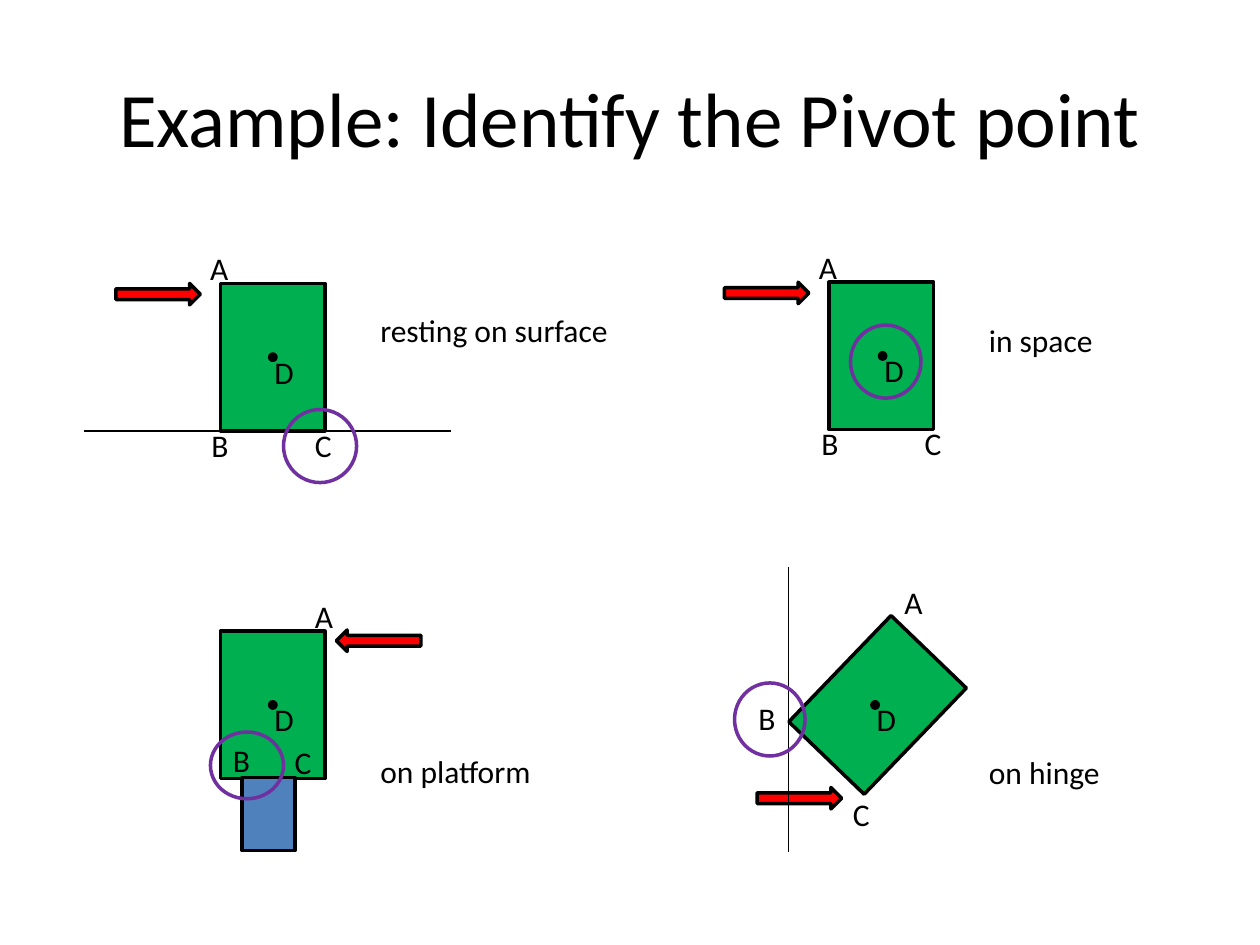
from dataclasses import dataclass

from lxml import etree
from pptx import Presentation
from pptx.dml.color import RGBColor
from pptx.enum.shapes import MSO_CONNECTOR, MSO_SHAPE
from pptx.enum.text import MSO_ANCHOR, MSO_AUTO_SIZE, PP_ALIGN
from pptx.oxml.ns import qn
from pptx.util import Emu, Pt

RECTANGLE = MSO_SHAPE.RECTANGLE
ARROW = MSO_SHAPE.RIGHT_ARROW
OVAL = MSO_SHAPE.OVAL
STRAIGHT = MSO_CONNECTOR.STRAIGHT
MIDDLE = MSO_ANCHOR.MIDDLE
FIT_SHAPE = MSO_AUTO_SIZE.SHAPE_TO_FIT_TEXT
CENTER = PP_ALIGN.CENTER
EMU_PER_PX = 9144
TITLE_ONLY = 5


@dataclass(frozen=True)
class Theme:
    """Colours, font and sizes of the slide."""

    font: str = "Calibri"
    title_size: int = 44
    label_size: int = 18
    outline: float = 2
    thin_line: float = 0.75
    ink: RGBColor = RGBColor(0, 0, 0)
    block: RGBColor = RGBColor(0x00, 0xB0, 0x50)
    force: RGBColor = RGBColor(0xFF, 0x00, 0x00)
    platform: RGBColor = RGBColor(0x4F, 0x81, 0xBD)
    ring: RGBColor = RGBColor(0x70, 0x30, 0xA0)


THEME = Theme()


def px(*lengths):
    """Turn whole px lengths into EMU."""
    return [Emu(length * EMU_PER_PX) for length in lengths]


def place(box, left, top):
    """Give the slide position of a point relative to the box."""
    return box[0] + left, box[1] + top


def style_paragraph(paragraph, size):
    """Set the font of a whole paragraph."""
    paragraph.font.name = THEME.font
    paragraph.font.size = Pt(size)
    paragraph.font.color.rgb = THEME.ink


def add_outlined(slide, kind, box, bounds, fill=None, line=THEME.ink, rotation=0):
    """Draw a preset shape relative to the box."""
    left, top, width, height = bounds
    shape = slide.shapes.add_shape(kind, *px(*place(box, left, top), width, height))
    shape.shadow.inherit = False
    shape.rotation = rotation
    if fill is None:
        shape.fill.background()
    else:
        shape.fill.solid()
        shape.fill.fore_color.rgb = fill
    shape.line.color.rgb = line
    shape.line.width = Pt(THEME.outline)


def add_label(slide, box, text, position, width=35, wrap=False):
    """Write one line of text relative to the box."""
    label = slide.shapes.add_textbox(*px(*place(box, *position), width, 40))
    frame = label.text_frame
    frame.word_wrap = wrap
    frame.auto_size = FIT_SHAPE
    frame.text = text
    style_paragraph(frame.paragraphs[0], THEME.label_size)


def add_thin_line(slide, box, start, end):
    """Draw a surface line relative to the box."""
    line = slide.shapes.add_connector(
        STRAIGHT, *px(*place(box, *start), *place(box, *end))
    )
    line.line.color.rgb = THEME.ink
    line.line.width = Pt(THEME.thin_line)
    etree.SubElement(line._element.spPr, qn("a:effectLst"))


def add_block(slide, box, corners, centre, rotation=0):
    """Draw the block with its corner letters and marked centre D."""
    add_outlined(slide, RECTANGLE, box, (0, 0, 83, 117), THEME.block, rotation=rotation)
    for letter, position in zip("ABC", corners):
        add_label(slide, box, letter, position)
    left, top = centre
    add_label(slide, box, "D", (left - 6, top - 6), wrap=True)
    add_outlined(slide, OVAL, box, (left, top, 5, 5), THEME.ink)


def add_force(slide, box, position, rotation=0):
    """Draw the red force arrow."""
    add_outlined(slide, ARROW, box, (*position, 67, 17), THEME.force, rotation=rotation)


def add_ring(slide, box, bounds):
    """Circle the pivot point."""
    add_outlined(slide, OVAL, box, bounds, line=THEME.ring)


def add_title(slide, box):
    """Fill the title placeholder."""
    title = slide.shapes.title
    title.left, title.top, title.width, title.height = px(*box)
    title.text_frame.text = "Example: Identify the Pivot point"
    title.text_frame.vertical_anchor = MIDDLE
    paragraph = title.text_frame.paragraphs[0]
    paragraph.alignment = CENTER
    style_paragraph(paragraph, THEME.title_size)


def add_surface_case(slide, box):
    """Show the block resting on a surface, with pivot C."""
    add_thin_line(slide, box, (-108, 117), (183, 117))
    add_block(slide, box, [(-18, -32), (-17, 108), (65, 108)], (39, 56))
    add_force(slide, box, (-83, 0))
    add_label(slide, box, "resting on surface", (117, 17), 203)
    add_ring(slide, box, (50, 100, 58, 58))


def add_space_case(slide, box):
    """Show the block in space, with pivot D."""
    add_block(slide, box, [(-18, -32), (-16, 108), (66, 108)], (40, 56))
    add_force(slide, box, (-83, 0))
    add_label(slide, box, "in space", (117, 26), 104)
    add_ring(slide, box, (17, 34, 56, 58))


def add_platform_case(slide, box):
    """Show the block on a platform, with pivot B."""
    add_block(slide, box, [(65, -32), (0, 82), (49, 84)], (39, 56))
    add_force(slide, box, (92, -1), rotation=180)
    add_outlined(slide, RECTANGLE, box, (17, 116, 42, 58), THEME.platform)
    add_label(slide, box, "on platform", (117, 91), 141)
    add_ring(slide, box, (-8, 80, 58, 53))


def add_hinge_case(slide, box):
    """Show the turned block on a wall hinge, with pivot B."""
    add_block(slide, box, [(53, -43), (-63, 49), (12, 125)], (37, 56), rotation=43.9)
    add_force(slide, box, (-54, 124))
    add_thin_line(slide, box, (-29, -51), (-29, 175))
    add_label(slide, box, "on hinge", (120, 92), 109)
    add_ring(slide, box, (-72, 41, 56, 58))


def main():
    """Build and save the slide."""
    presentation = Presentation()
    presentation.slide_width, presentation.slide_height = px(1000, 750)
    slide = presentation.slides.add_slide(presentation.slide_layouts[TITLE_ONLY])
    add_title(slide, (50, 30, 900, 125))
    add_surface_case(slide, (175, 225))
    add_space_case(slide, (658, 224))
    add_platform_case(slide, (175, 501))
    add_hinge_case(slide, (655, 501))
    presentation.save("out.pptx")


if __name__ == "__main__":
    main()
